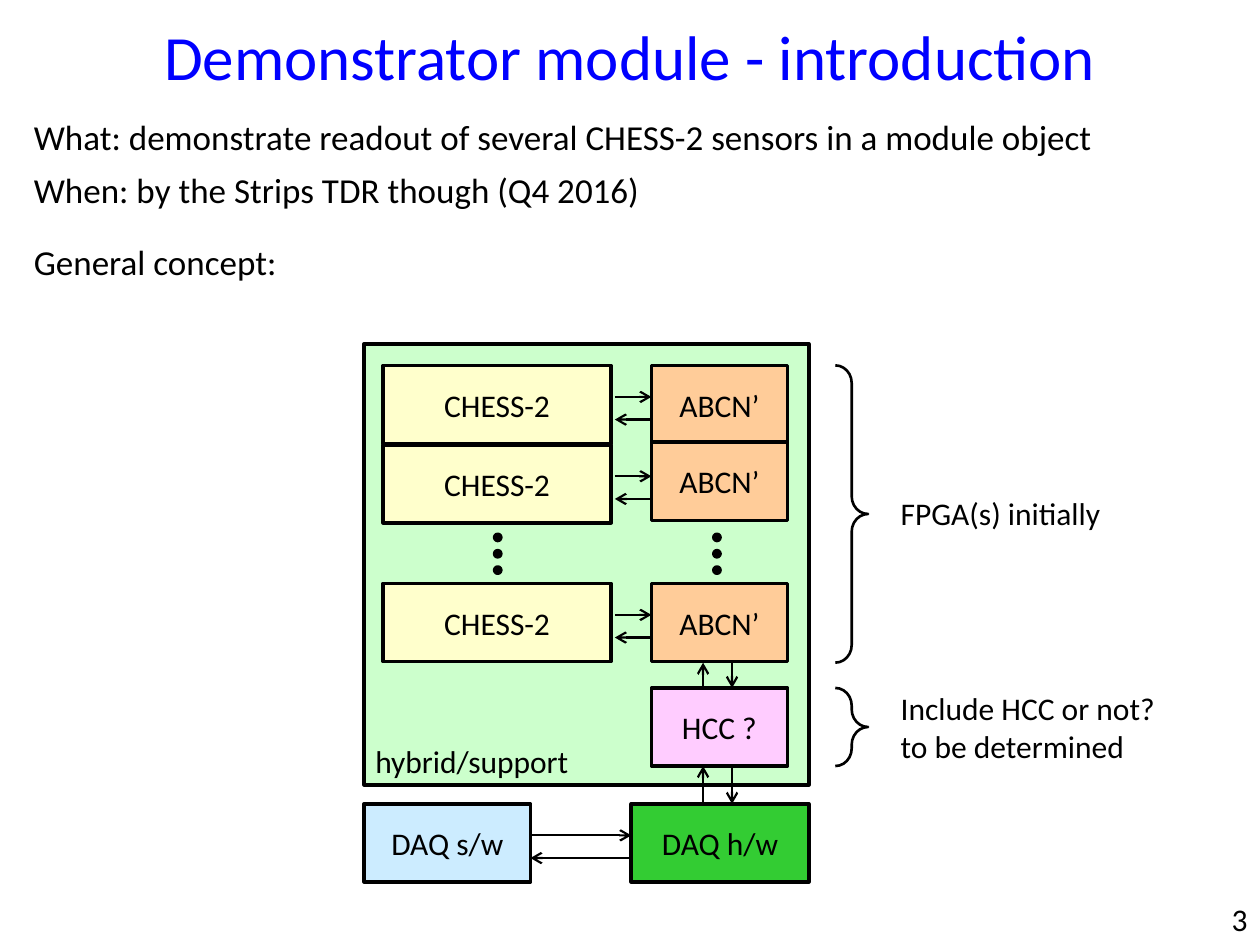
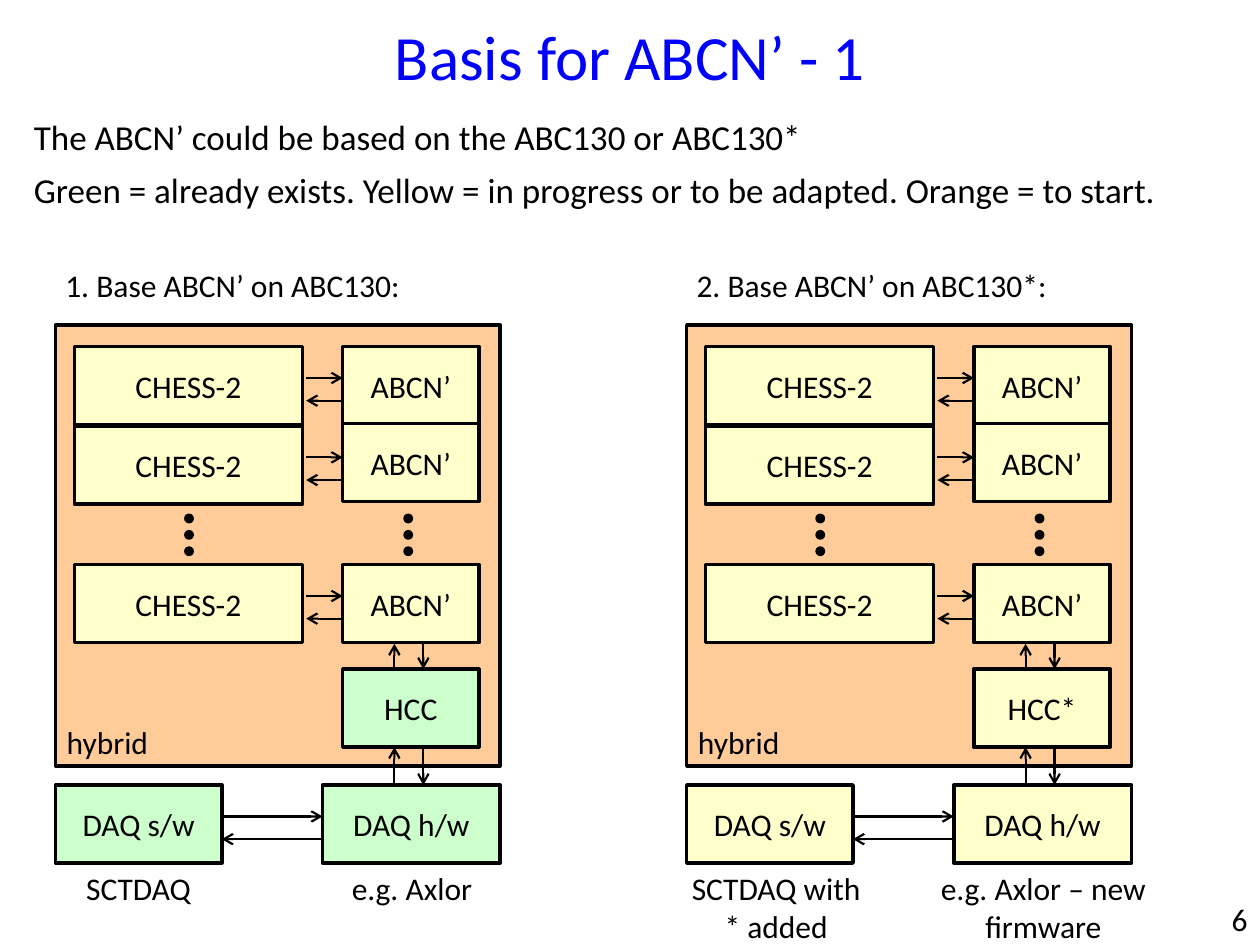
from dataclasses import dataclass

from lxml import etree
from pptx import Presentation
from pptx.dml.color import RGBColor
from pptx.enum.shapes import MSO_CONNECTOR, MSO_SHAPE
from pptx.enum.text import MSO_ANCHOR, MSO_AUTO_SIZE, PP_ALIGN
from pptx.oxml.ns import qn
from pptx.util import Inches, Pt

RECTANGLE, DOT, BRACE = MSO_SHAPE.RECTANGLE, MSO_SHAPE.OVAL, MSO_SHAPE.RIGHT_BRACE
STRAIGHT = MSO_CONNECTOR.STRAIGHT
LEFT, CENTER, RIGHT = PP_ALIGN.LEFT, PP_ALIGN.CENTER, PP_ALIGN.RIGHT
TOP, MIDDLE = MSO_ANCHOR.TOP, MSO_ANCHOR.MIDDLE
GROW, FIXED = MSO_AUTO_SIZE.SHAPE_TO_FIT_TEXT, MSO_AUTO_SIZE.NONE


@dataclass(frozen=True)
class Theme:
    font: str = "Calibri"
    title_size: int = 36
    body_size: int = 20
    label_size: int = 18
    outline: float = 2
    brace_line: float = 1.5
    arrow_line: float = 1.25
    black: str = "000000"
    blue: str = "0000FF"
    pale_green: str = "CCFFCC"
    green: str = "33CC33"
    yellow: str = "FFFFCC"
    orange: str = "FFCC99"
    pink: str = "FFCCFF"
    sky: str = "CCECFF"


THEME = Theme()

# Diagram geometry, measured from the top left corner of the hybrid
HYBRID_WIDTH, HYBRID_HEIGHT = 3.53, 3.5
BOX_HEIGHT = 0.62
CHESS_LEFT, CHESS_WIDTH, CHESS_TOPS = 0.15, 1.81, (0.17, 0.8, 1.9)
ABCN_LEFT, ABCN_WIDTH, ABCN_TOPS = 2.28, 1.08, (0.17, 0.78, 1.9)
HCC_TOP, DAQ_TOP = 2.73, 3.65
SOFTWARE_WIDTH, HARDWARE_WIDTH = 1.32, 1.41
HARDWARE_LEFT = HYBRID_WIDTH - HARDWARE_WIDTH
UP_ARROW, DOWN_ARROW = 2.69, 2.92
DOT_SIZE, DOT_TOP, DOT_STEP = 0.05, 1.51, 0.13


@dataclass(frozen=True)
class DiagramColors:
    hybrid: str
    chess: str
    abcn: str
    hcc: str
    software: str
    hardware: str


class Deck:
    """Holds the presentation, its theme and the slide being drawn."""

    def __init__(self, theme):
        self.theme = theme
        self.presentation = Presentation()
        self.presentation.slide_width = Inches(10)
        self.presentation.slide_height = Inches(7.5)
        self.slide = None

    def new_slide(self, title, number):
        layout = self.presentation.slide_layouts[6]
        self.slide = self.presentation.slides.add_slide(layout)
        self.text([title], 0.5, 0.13, 9, 0.62, size=self.theme.title_size,
                  color=self.theme.blue, align=CENTER, anchor=MIDDLE)
        self.text([number], 9.25, 7.09, 0.75, 0.4, align=RIGHT, anchor=MIDDLE)

    def fill_frame(self, frame, lines, size, color, align, anchor):
        frame.word_wrap = True
        frame.vertical_anchor = anchor
        for index, line in enumerate(lines):
            paragraph = frame.paragraphs[0] if index == 0 else frame.add_paragraph()
            paragraph.text = line
            paragraph.alignment = align
            paragraph.font.name = self.theme.font
            paragraph.font.size = Pt(size)
            paragraph.font.color.rgb = RGBColor.from_string(color)

    def text(self, lines, left, top, width, height, size=THEME.label_size,
             color=THEME.black, align=LEFT, anchor=TOP):
        box = self.slide.shapes.add_textbox(
            Inches(left), Inches(top), Inches(width), Inches(height))
        frame = box.text_frame
        self.fill_frame(frame, lines, size, color, align, anchor)
        frame.auto_size = GROW if anchor == TOP else FIXED
        return frame

    def body(self, lines, height):
        frame = self.text(lines, 0.17, 0.87, 9.62, height, size=self.theme.body_size)
        for paragraph in frame.paragraphs:
            paragraph.space_after = Pt(6)
        return frame

    def shape(self, kind, left, top, width, height, fill=None,
              line_width=THEME.outline, shapes=None):
        shapes = self.slide.shapes if shapes is None else shapes
        shape = shapes.add_shape(
            kind, Inches(left), Inches(top), Inches(width), Inches(height))
        shape.shadow.inherit = False
        if fill:
            shape.fill.solid()
            shape.fill.fore_color.rgb = RGBColor.from_string(fill)
        else:
            shape.fill.background()
        shape.line.color.rgb = RGBColor.from_string(self.theme.black)
        shape.line.width = Pt(line_width)
        return shape

    def box(self, label, left, top, width, fill):
        shape = self.shape(RECTANGLE, left, top, width, BOX_HEIGHT, fill)
        self.fill_frame(shape.text_frame, [label], self.theme.label_size,
                        self.theme.black, CENTER, MIDDLE)

    def brace(self, top, height):
        shape = self.shape(BRACE, 6.63, top, 0.26, height,
                           line_width=self.theme.brace_line)
        shape.adjustments[0] = 0.54

    def dots(self, center, top):
        group = self.slide.shapes.add_group_shape()
        for index in range(3):
            self.shape(DOT, center - DOT_SIZE / 2, top + index * DOT_STEP,
                       DOT_SIZE, DOT_SIZE, self.theme.black, shapes=group.shapes)

    def arrow(self, start_x, start_y, end_x, end_y):
        connector = self.slide.shapes.add_connector(
            STRAIGHT, Inches(start_x), Inches(start_y), Inches(end_x), Inches(end_y))
        connector.line.color.rgb = RGBColor.from_string(self.theme.black)
        connector.line.width = Pt(self.theme.arrow_line)
        properties = connector._element.spPr
        outline = properties.find(qn("a:ln"))
        etree.SubElement(outline, qn("a:tailEnd"), type="arrow")
        etree.SubElement(properties, qn("a:effectLst"))

    def exchange_across(self, left, right, top):
        """Arrows both ways between two boxes that stand side by side."""
        self.arrow(left, top + 0.25, right, top + 0.25)
        self.arrow(right, top + 0.43, left, top + 0.43)

    def exchange_down(self, left, top, bottom):
        """Arrows both ways between two boxes, one above the other."""
        self.arrow(left + UP_ARROW, bottom, left + UP_ARROW, top)
        self.arrow(left + DOWN_ARROW, top, left + DOWN_ARROW, bottom)

    def diagram(self, left, top, colors, hybrid_label, hcc_label):
        abcn_left = left + ABCN_LEFT
        hcc_top, daq_top = top + HCC_TOP, top + DAQ_TOP
        self.shape(RECTANGLE, left, top, HYBRID_WIDTH, HYBRID_HEIGHT, colors.hybrid)

        # Sensor and readout rows
        for chess_top, abcn_top in zip(CHESS_TOPS, ABCN_TOPS):
            self.box("CHESS-2", left + CHESS_LEFT, top + chess_top,
                     CHESS_WIDTH, colors.chess)
            self.box("ABCN’", abcn_left, top + abcn_top, ABCN_WIDTH, colors.abcn)
            self.exchange_across(left + 1.99, abcn_left, top + chess_top)
        for center in (1.06, 2.8):
            self.dots(left + center, top + DOT_TOP)

        # Controller and data acquisition
        self.box(hcc_label, abcn_left, hcc_top, ABCN_WIDTH, colors.hcc)
        self.box("DAQ h/w", left + HARDWARE_LEFT, daq_top,
                 HARDWARE_WIDTH, colors.hardware)
        self.box("DAQ s/w", left, daq_top, SOFTWARE_WIDTH, colors.software)
        self.exchange_across(left + SOFTWARE_WIDTH, left + HARDWARE_LEFT, daq_top)
        self.exchange_down(left, top + ABCN_TOPS[-1] + BOX_HEIGHT + 0.01, hcc_top)
        self.exchange_down(left, hcc_top + BOX_HEIGHT, daq_top)
        self.text([hybrid_label], left - 0.01, top + 3.11, 1.98, 0.4)


def introduction_slide(deck):
    theme = deck.theme
    deck.new_slide("Demonstrator module - introduction", "3")
    body = deck.body([
        "What: demonstrate readout of several CHESS-2 sensors in a module object",
        "When: by the Strips TDR though (Q4 2016)",
        "General concept:",
    ], 1.43)
    body.paragraphs[2].space_before = Pt(11)

    top = 2.73
    colors = DiagramColors(hybrid=theme.pale_green, chess=theme.yellow,
                           abcn=theme.orange, hcc=theme.pink,
                           software=theme.sky, hardware=theme.green)
    deck.diagram(2.89, top, colors, "hybrid/support", "HCC ?")

    # Remarks beside the diagram
    deck.brace(top + ABCN_TOPS[0], 2.36)
    deck.brace(top + HCC_TOP, BOX_HEIGHT)
    deck.text(["FPGA(s) initially"], 7.05, 3.87, 2.71, 0.4)
    deck.text(["Include HCC or not?\vto be determined"], 7.05, 5.42, 2.71, 0.71)


def basis_slide(deck):
    theme = deck.theme
    deck.new_slide("Basis for ABCN’ - 1", "6")
    deck.body([
        "The ABCN’ could be based on the ABC130 or ABC130*",
        "Green = already exists. Yellow = in progress or to be adapted. "
        "Orange = to start.",
    ], 0.86)

    # Each option: left, heading, controller, its colour, captions (text, centre, width)
    options = [
        (0.44, "1. Base ABCN’ on ABC130:", "HCC", theme.pale_green,
         [("SCTDAQ", 0.66, 1.37), ("e.g. Axlor", 2.83, 1.42)], 0.4),
        (5.45, "2. Base ABCN’ on ABC130*:", "HCC*", theme.yellow,
         [("SCTDAQ with * added", 0.71, 1.64),
          ("e.g. Axlor – new firmware", 2.83, 2.15)], 0.71),
    ]
    top = 2.58
    for left, heading, controller, status, captions, caption_height in options:
        colors = DiagramColors(hybrid=theme.orange, chess=theme.yellow,
                               abcn=theme.yellow, hcc=status,
                               software=status, hardware=status)
        deck.diagram(left, top, colors, "hybrid", controller)
        deck.text([heading], left - 0.02, 2.06, 3, 0.4)
        for caption, center, width in captions:
            deck.text([caption], left + center - width / 2,
                      top + DAQ_TOP + BOX_HEIGHT, width, caption_height, align=CENTER)


def main():
    deck = Deck(THEME)
    introduction_slide(deck)
    basis_slide(deck)
    deck.presentation.save("out.pptx")


if __name__ == "__main__":
    main()
